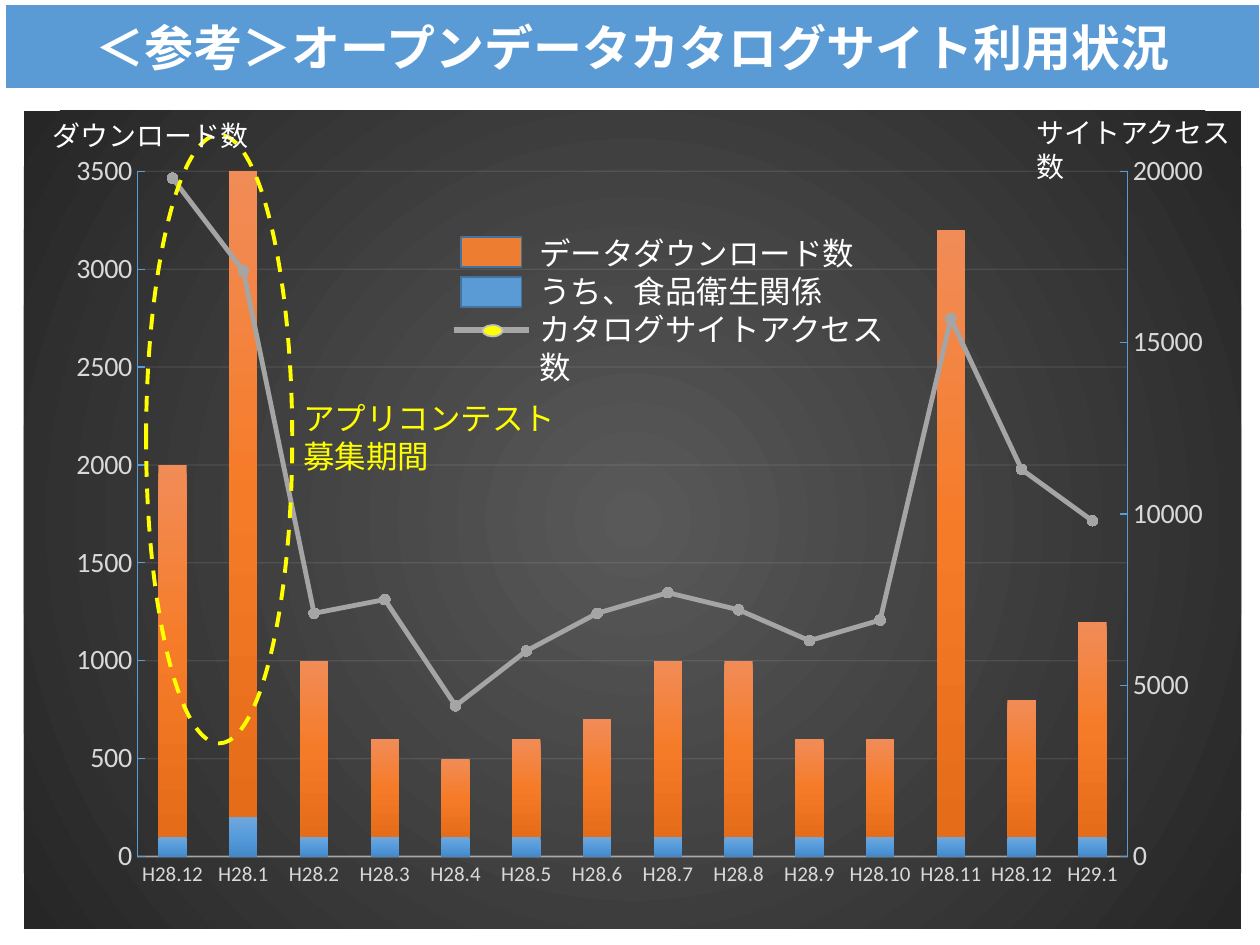
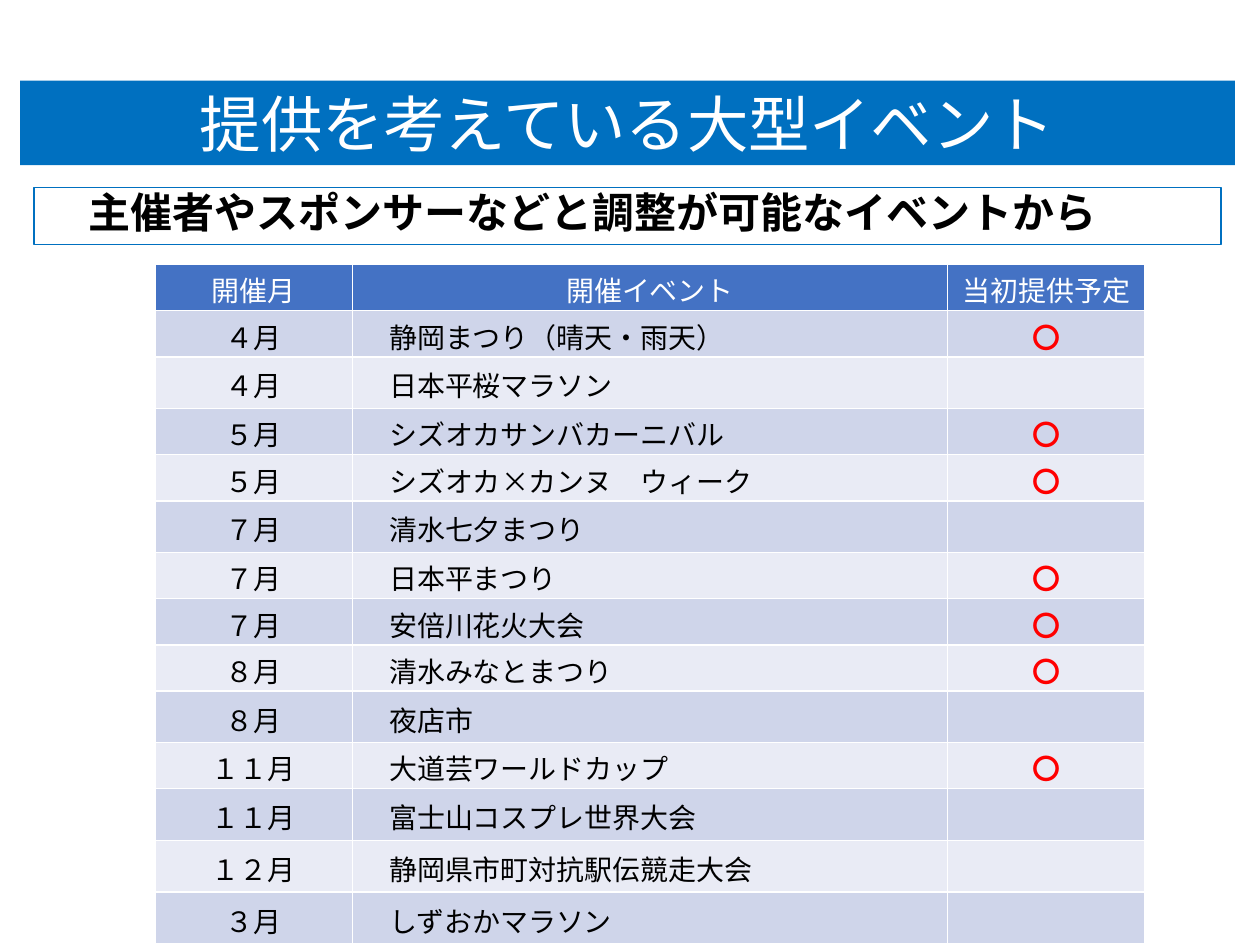
"""Build two slides: open data site usage and planned large events."""
import copy

import pptx
import pptx.chart.data
import pptx.dml.color
import pptx.enum.chart
import pptx.enum.dml
import pptx.enum.shapes
import pptx.enum.text
import pptx.oxml
import pptx.oxml.ns
import pptx.util
from pptx.util import Inches, Pt

CJK_FONT = "Noto Sans CJK JP"
LATIN_FONT = "Calibri"
WHITE, BLACK, YELLOW, RED = "FFFFFF", "000000", "FFFF00", "FF0000"
BLUE, ORANGE, GRAY, DEEP_BLUE = "5B9BD5", "ED7D31", "A5A5A5", "0070C0"
SWATCH_LINE, AXIS_TEXT, PALE = "43739E", "D9D9D9", "F2F2F2"
HEADER_FILL, BAND_FILLS = "4472C4", ("CFD5EA", "E9EBF5")
CENTER = pptx.enum.text.PP_ALIGN.CENTER
MIDDLE = pptx.enum.text.MSO_ANCHOR.MIDDLE
SHAPE = pptx.enum.shapes.MSO_SHAPE
TICK = pptx.enum.chart.XL_TICK_MARK
qn = pptx.oxml.ns.qn

USAGE_TITLE = "＜参考＞オープンデータカタログサイト利用状況"
MONTHS = ["H28.12", "H28.1", "H28.2", "H28.3", "H28.4", "H28.5", "H28.6",
          "H28.7", "H28.8", "H28.9", "H28.10", "H28.11", "H28.12", "H29.1"]
USAGE = {
    "うち、食品衛生関係":
        [100, 200, 100, 100, 100, 100, 100, 100, 100, 100, 100, 100, 100, 100],
    "データダウンロード数":
        [1900, 3300, 900, 500, 400, 500, 600, 900, 900, 500, 500, 3100, 700, 1100],
    "カタログサイトアクセス数":
        [19800, 17100, 7100, 7500, 4400, 6000, 7100, 7700, 7200, 6300, 6900,
         15700, 11300, 9800],
}
BAR_GRADIENTS = [
    [(0, "71A6DB"), (50, "559BDB"), (100, "448ACA")],
    [(0, "F18C57"), (50, "F67B28"), (100, "E56C19")],
]
CHART_GRADIENT = [(0, "595959"), (100, "262626")]
PLOT_AREA = {"x": 0.093, "y": 0.074, "w": 0.814, "h": 0.838}
CHART_LABELS = [
    (["データダウンロード数", "うち、食品衛生関係", "カタログサイトアクセス数"],
     (4.18, 1.82, 3.09, 1.01), 18, WHITE),
    (["ダウンロード数"], (0.32, 0.9, 1.76, 0.37), 16, WHITE),
    (["サイトアクセス数"], (8.13, 0.88, 1.76, 0.37), 16, WHITE),
    (["アプリコンテスト", "募集期間"], (2.31, 3.13, 2.47, 0.71), 18, YELLOW),
]

EVENTS_TITLE = "提供を考えている大型イベント"
EVENTS_LEAD = "　主催者やスポンサーなどと調整が可能なイベントから"
EVENT_HEADER = ("開催月", "開催イベント", "当初提供予定")
EVENTS = [
    ("４月", "静岡まつり（晴天・雨天）", "〇"),
    ("４月", "日本平桜マラソン", ""),
    ("５月", "シズオカサンバカーニバル", "〇"),
    ("５月", "シズオカ×カンヌ　ウィーク", "〇"),
    ("７月", "清水七夕まつり", ""),
    ("７月", "日本平まつり", "〇"),
    ("７月", "安倍川花火大会", "〇"),
    ("８月", "清水みなとまつり", "〇"),
    ("８月", "夜店市", ""),
    ("１１月", "大道芸ワールドカップ", "〇"),
    ("１１月", "富士山コスプレ世界大会", ""),
    ("１２月", "静岡県市町対抗駅伝競走大会", ""),
    ("３月", "しずおかマラソン", ""),
]
EVENT_WIDTHS = (1.57, 4.72, 1.57)


def rgb(value):
    """Turn a hex string into a colour."""
    return pptx.dml.color.RGBColor.from_string(value)


def inches(box):
    """Turn a tuple of numbers into lengths."""
    return [Inches(value) for value in box]


def xml(text):
    """Parse a drawing or chart fragment."""
    tag_end = min(text.index(mark) for mark in " />" if mark in text)
    namespaces = pptx.oxml.ns.nsdecls("a", "c")
    return pptx.oxml.parse_xml(f"{text[:tag_end]} {namespaces}{text[tag_end:]}")


def set_font(font, size, color, name=CJK_FONT, bold=False):
    """Format a font, with one typeface for East Asian text."""
    font.size, font.bold, font.name = Pt(size), bold, name
    font.color.rgb = rgb(color)
    font._element.find(qn("a:latin")).addnext(xml(f'<a:ea typeface="{CJK_FONT}"/>'))


def set_line(line, color, width, opacity=100):
    """Colour a line, optionally translucent."""
    line.color.rgb = rgb(color)
    line.width = Pt(width)
    if opacity < 100:
        solid = line._get_or_add_ln().find(".//" + qn("a:srgbClr"))
        solid.append(xml(f'<a:alpha val="{opacity * 1000}"/>'))


def paint(shape, fill=None, line=None, width=1):
    """Give a shape its fill and line, or none."""
    if fill:
        shape.fill.solid()
        shape.fill.fore_color.rgb = rgb(fill)
    else:
        shape.fill.background()
    if line:
        set_line(shape.line, line, width)
    else:
        shape.line.fill.background()


def add_shape(slide, kind, box, fill=None, line=None, width=1):
    """Add a preset shape without a shadow."""
    shape = slide.shapes.add_shape(kind, *inches(box))
    shape.shadow.inherit = False
    paint(shape, fill, line, width)
    return shape


def add_titled_slide(presentation, title, box, size, fill, line=None, bold=False):
    """Add a slide whose title is a coloured band."""
    slide = presentation.slides.add_slide(presentation.slide_layouts[5])
    band = slide.shapes.title
    band.left, band.top, band.width, band.height = inches(box)
    paint(band, fill, line, 1.5)
    frame = band.text_frame
    frame.text = title
    frame.auto_size = pptx.enum.text.MSO_AUTO_SIZE.NONE
    frame.vertical_anchor = MIDDLE
    frame.paragraphs[0].alignment = CENTER
    set_font(frame.paragraphs[0].font, size, WHITE, bold=bold)
    return slide


def add_label(slide, lines, box, size, color):
    """Add a text box with one paragraph a line."""
    frame = slide.shapes.add_textbox(*inches(box)).text_frame
    frame.word_wrap = True
    frame.margin_top = Inches(0.04)
    frame.text = "\n".join(lines)
    for paragraph in frame.paragraphs:
        paragraph.line_spacing = Pt(size * 1.2)
        set_font(paragraph.font, size, color, LATIN_FONT)


def gradient(stops, direction):
    """Write a gradient fill."""
    marks = "".join(f'<a:gs pos="{place * 1000}"><a:srgbClr val="{color}"/></a:gs>'
                    for place, color in stops)
    return f"<a:gradFill><a:gsLst>{marks}</a:gsLst>{direction}</a:gradFill>"


def format_axis(axis, size, tick, line, width, opacity=100):
    """Format labels, ticks and line of an axis."""
    axis.major_tick_mark, axis.minor_tick_mark = tick, TICK.NONE
    set_font(axis.tick_labels.font, size, AXIS_TEXT, LATIN_FONT)
    set_line(axis.format.line, line, width, opacity)


def move_to_right_axis(chart):
    """Turn the last bar series into a line on a second value axis."""
    plot_area = chart._chartSpace.find(".//" + qn("c:plotArea"))
    bars = plot_area.find(qn("c:barChart"))
    accesses = bars.findall(qn("c:ser"))[-1]
    for flag in accesses.findall(qn("c:invertIfNegative")):
        accesses.remove(flag)
    line_chart = xml('<c:lineChart><c:grouping val="standard"/><c:varyColors val="0"/>'
                     '<c:marker val="1"/><c:axId val="5001"/><c:axId val="5002"/>'
                     '</c:lineChart>')
    line_chart.insert(2, accesses)
    bars.addnext(line_chart)

    value_axis = chart.value_axis._element
    months = copy.deepcopy(chart.category_axis._element)
    counts = copy.deepcopy(value_axis)
    counts.remove(counts.find(qn("c:majorGridlines")))
    changes = [
        (months, {"axId": "5001", "crossAx": "5002", "delete": "1"}),
        (counts, {"axId": "5002", "crossAx": "5001", "axPos": "r", "crosses": "max",
                  "max": "20000", "majorUnit": "5000"}),
    ]
    for axis, values in changes:
        for name, value in values.items():
            axis.find(".//" + qn(f"c:{name}")).set("val", value)
    value_axis.addnext(months)
    months.addnext(counts)


def add_usage_chart(slide):
    """Add the combined chart of downloads and site accesses."""
    data = pptx.chart.data.CategoryChartData()
    data.categories = MONTHS
    for name, values in USAGE.items():
        data.add_series(name, values)
    chart = slide.shapes.add_chart(pptx.enum.chart.XL_CHART_TYPE.COLUMN_STACKED,
                                   *inches((0.19, 0.88, 9.66, 6.49)), data).chart
    chart.has_legend = chart.has_title = False
    set_font(chart.font, 10, BLACK, LATIN_FONT)
    format_axis(chart.category_axis, 12, TICK.NONE, PALE, 1, 54)
    axis = chart.value_axis
    format_axis(axis, 16, TICK.INSIDE, BLUE, 0.75)
    axis.minimum_scale, axis.maximum_scale, axis.major_unit = 0, 3500, 500
    axis.has_major_gridlines = True
    set_line(axis.major_gridlines.format.line, PALE, 0.75, 10)
    move_to_right_axis(chart)

    bars, lines = chart.plots
    bars.gap_width, bars.overlap, bars.vary_by_categories = 150, 100, False
    for series, stops in zip(bars.series, BAR_GRADIENTS):
        series._element.get_or_add_spPr().append(
            xml(gradient(stops, '<a:lin ang="5400000" scaled="0"/>')))
    accesses = lines.series[0]
    accesses.smooth = False
    set_line(accesses.format.line, GRAY, 2.75)
    accesses.marker.style = pptx.enum.chart.XL_MARKER_STYLE.CIRCLE
    accesses.marker.size = 6
    accesses.marker.format.fill.solid()
    accesses.marker.format.fill.fore_color.rgb = rgb(YELLOW)
    set_line(accesses.marker.format.line, GRAY, 0.75)

    plot_area = chart._chartSpace.find(".//" + qn("c:plotArea"))
    for layout in plot_area.findall(qn("c:layout")):
        plot_area.remove(layout)
    modes = "".join(f'<c:{side}Mode val="edge"/>' for side in "xy")
    places = "".join(f'<c:{side} val="{value}"/>' for side, value in PLOT_AREA.items())
    plot_area.insert(0, xml('<c:layout><c:manualLayout><c:layoutTarget val="inner"/>'
                            f'{modes}{places}</c:manualLayout></c:layout>'))
    glow = ('<a:path path="circle"><a:fillToRect l="50000" t="50000" r="50000" '
            'b="50000"/></a:path>')
    chart._chartSpace.find(qn("c:chart")).addnext(
        xml(f"<c:spPr>{gradient(CHART_GRADIENT, glow)}<a:ln><a:noFill/></a:ln></c:spPr>"))


def build_usage_slide(presentation):
    """Build the slide on use of the catalogue site."""
    slide = add_titled_slide(presentation, USAGE_TITLE, (0.04, 0.03, 9.96, 0.68), 28,
                             BLUE, WHITE, bold=True)
    add_usage_chart(slide)
    for row, color in enumerate((ORANGE, BLUE)):
        add_shape(slide, SHAPE.RECTANGLE, (3.66, 1.88 + row * 0.32, 0.48, 0.24),
                  color, SWATCH_LINE)
    key = slide.shapes.add_connector(pptx.enum.shapes.MSO_CONNECTOR.STRAIGHT,
                                     *inches((3.6, 2.62, 4.2, 2.62)))
    set_line(key.line, "A6A6A6", 3.25)
    key._element.spPr.append(xml("<a:effectLst/>"))
    add_shape(slide, SHAPE.OVAL, (3.83, 2.58, 0.16, 0.09), YELLOW, "BFBFBF")
    period = add_shape(slide, SHAPE.OVAL, (1.16, 1.07, 1.16, 4.83), None, YELLOW, 2.25)
    period.line.dash_style = pptx.enum.dml.MSO_LINE.DASH
    for label in CHART_LABELS:
        add_label(slide, *label)


def fill_cell(cell, text, fill, color, centered, bold):
    """Fill one table cell, with white borders."""
    cell.fill.solid()
    cell.fill.fore_color.rgb = rgb(fill)
    cell.vertical_anchor = MIDDLE
    cell.margin_top, cell.margin_bottom = Inches(0.09), 0
    properties = cell._tc.get_or_add_tcPr()
    for place, side in enumerate(("lnL", "lnR", "lnT", "lnB")):
        properties.insert(place, xml(
            f'<a:{side} w="12700"><a:solidFill><a:srgbClr val="{WHITE}"/>'
            f'</a:solidFill></a:{side}>'))
    cell.text = text
    paragraph = cell.text_frame.paragraphs[0]
    paragraph.line_spacing = Pt(19)
    set_font(paragraph.font, 16, color, bold=bold)
    if centered:
        paragraph.alignment = CENTER
    else:
        paragraph._p.get_or_add_pPr().set("marL", str(Inches(0.19)))


def build_events_slide(presentation):
    """Build the slide on planned events."""
    slide = add_titled_slide(presentation, EVENTS_TITLE, (0.16, 0.64, 9.64, 0.67), 35.1,
                             DEEP_BLUE)
    lead = add_shape(slide, SHAPE.RECTANGLE, (0.27, 1.49, 9.42, 0.45), WHITE,
                     DEEP_BLUE, 0.75)
    lead.text_frame.text = EVENTS_LEAD
    lead.text_frame.margin_top = Inches(0.04)
    lead.text_frame.vertical_anchor = pptx.enum.text.MSO_ANCHOR.TOP
    paragraph = lead.text_frame.paragraphs[0]
    paragraph.alignment = pptx.enum.text.PP_ALIGN.LEFT
    paragraph.line_spacing, paragraph.space_before = Pt(25), Pt(12)
    set_font(paragraph.font, 24, BLACK, bold=True)

    rows = [EVENT_HEADER] + EVENTS
    table = slide.shapes.add_table(len(rows), len(EVENT_WIDTHS),
                                   *inches((1.23, 2.1, 7.86, 5.13))).table
    for column, width in zip(table.columns, EVENT_WIDTHS):
        column.width = Inches(width)
    for row, texts in enumerate(rows):
        for column, text in enumerate(texts):
            header, mark = row == 0, row > 0 and column == 2
            fill = HEADER_FILL if header else BAND_FILLS[(row - 1) % 2]
            color = WHITE if header else RED if mark else BLACK
            fill_cell(table.cell(row, column), text, fill, color,
                      header or column != 1, mark)


def main():
    """Build and save the presentation."""
    presentation = pptx.Presentation()
    presentation.slide_width, presentation.slide_height = Inches(10), Inches(7.5)
    build_usage_slide(presentation)
    build_events_slide(presentation)
    presentation.save("out.pptx")


if __name__ == "__main__":
    main()
